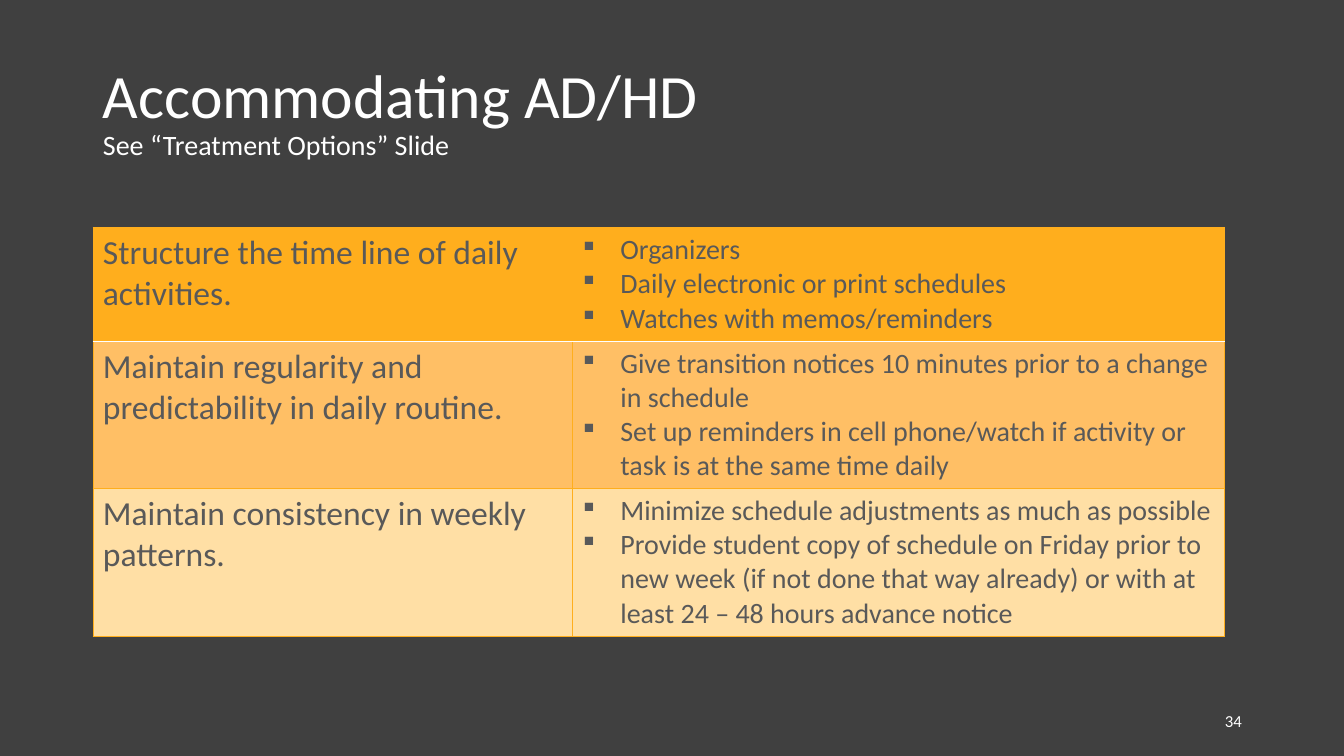
from dataclasses import dataclass

from lxml.etree import Element, SubElement
from pptx import Presentation
from pptx.dml.color import RGBColor
from pptx.enum.text import MSO_ANCHOR as Anchor, MSO_AUTO_SIZE as Fit, PP_ALIGN as Align
from pptx.oxml.ns import qn
from pptx.table import _Cell as Cell
from pptx.text.text import _Paragraph as Para
from pptx.util import Cm, Pt

DARK = RGBColor(0x40, 0x40, 0x40)
WHITE = RGBColor(0xFF, 0xFF, 0xFF)
GRAY = RGBColor(0x59, 0x59, 0x59)
AMBER = RGBColor(0xFF, 0xAE, 0x1D)
PEACH = RGBColor(0xFF, 0xBF, 0x65)
CREAM = RGBColor(0xFF, 0xDF, 0xA5)
FONT = "Calibri"
LEFT = Cm(2.34)
INDENT = Cm(0.95)
WIDTHS = (Cm(12.09), Cm(16.43))


@dataclass
class Goal:
    aim: str
    steps: list[str]
    fill: RGBColor
    height: Cm
    top: RGBColor = AMBER
    base: RGBColor = AMBER


GOALS = [
    Goal("Structure the time line of daily activities.",
         ["Organizers", "Daily electronic or print schedules", "Watches with memos/reminders"],
         AMBER, Cm(2.86), base=WHITE),
    Goal("Maintain regularity and predictability in daily routine.",
         ["Give transition notices 10 minutes prior to a change in schedule",
          "Set up reminders in cell phone/watch if activity or task is at the same time daily"],
         PEACH, Cm(3.71), top=WHITE),
    Goal("Maintain consistency in weekly patterns.",
         ["Minimize schedule adjustments as much as possible",
          "Provide student copy of schedule on Friday prior to new week "
          "(if not done that way already) or with at least 24 – 48 hours advance notice"],
         CREAM, Cm(3.71)),
]


def write(para: Para, text: str, *, size: int, color: RGBColor = WHITE,
          align: Align = Align.LEFT) -> None:
    para.alignment = align
    run = para.add_run()
    run.text = text
    run.font.name = FONT
    run.font.size = Pt(size)
    run.font.bold = False
    run.font.color.rgb = color


def bullet(para: Para) -> None:
    props = para._p.get_or_add_pPr()
    props.set("marL", str(INDENT))
    props.set("indent", str(-INDENT))
    SubElement(props, qn("a:buFont"), typeface="Wingdings")
    SubElement(props, qn("a:buChar"), char="§")


def border(cell: Cell, top: RGBColor, base: RGBColor) -> None:
    props = cell._tc.get_or_add_tcPr()
    sides = {"a:lnL": AMBER, "a:lnR": AMBER, "a:lnT": top, "a:lnB": base}
    for spot, (side, color) in enumerate(sides.items()):
        width = Pt(1) if color == WHITE else Pt(0.5)
        line = Element(qn(side), w=str(width))
        fill = SubElement(line, qn("a:solidFill"))
        SubElement(fill, qn("a:srgbClr"), val=str(color))
        props.insert(spot, line)


def style(cell: Cell, goal: Goal) -> None:
    cell.fill.solid()
    cell.fill.fore_color.rgb = goal.fill
    border(cell, goal.top, goal.base)


def main() -> None:
    deck = Presentation()
    deck.slide_width, deck.slide_height = Cm(33.87), Cm(19.05)
    slide = deck.slides.add_slide(deck.slide_layouts[5])
    slide.background.fill.solid()
    slide.background.fill.fore_color.rgb = DARK

    title = slide.shapes.title
    title.left, title.top, title.width, title.height = LEFT, Cm(1.02), Cm(29.21), Cm(3.68)
    frame = title.text_frame
    frame.auto_size = Fit.NONE
    frame.vertical_anchor = Anchor.MIDDLE
    head = frame.paragraphs[0]
    head.line_spacing = 0.9
    write(head, "Accommodating AD/HD", size=44)
    head.add_line_break()
    write(head, "See “Treatment Options” Slide", size=20)

    total = sum(goal.height for goal in GOALS)
    table = slide.shapes.add_table(len(GOALS), len(WIDTHS), LEFT, Cm(5.74),
                                   sum(WIDTHS), total).table
    table.first_row = table.horz_banding = False
    for column, width in zip(table.columns, WIDTHS):
        column.width = width
    for row, goal in zip(table.rows, GOALS):
        row.height = goal.height
        aim, plan = row.cells
        style(aim, goal)
        style(plan, goal)
        write(aim.text_frame.paragraphs[0], goal.aim, size=24, color=GRAY)
        for spot, step in enumerate(goal.steps):
            body = plan.text_frame
            para = body.add_paragraph() if spot else body.paragraphs[0]
            write(para, step, size=20, color=GRAY)
            bullet(para)

    page = slide.shapes.add_textbox(Cm(23.93), Cm(17.65), Cm(7.62), Cm(1.02)).text_frame
    page.word_wrap = True
    page.vertical_anchor = Anchor.MIDDLE
    write(page.paragraphs[0], "34", size=12, align=Align.RIGHT)

    deck.save("out.pptx")


if __name__ == "__main__":
    main()
